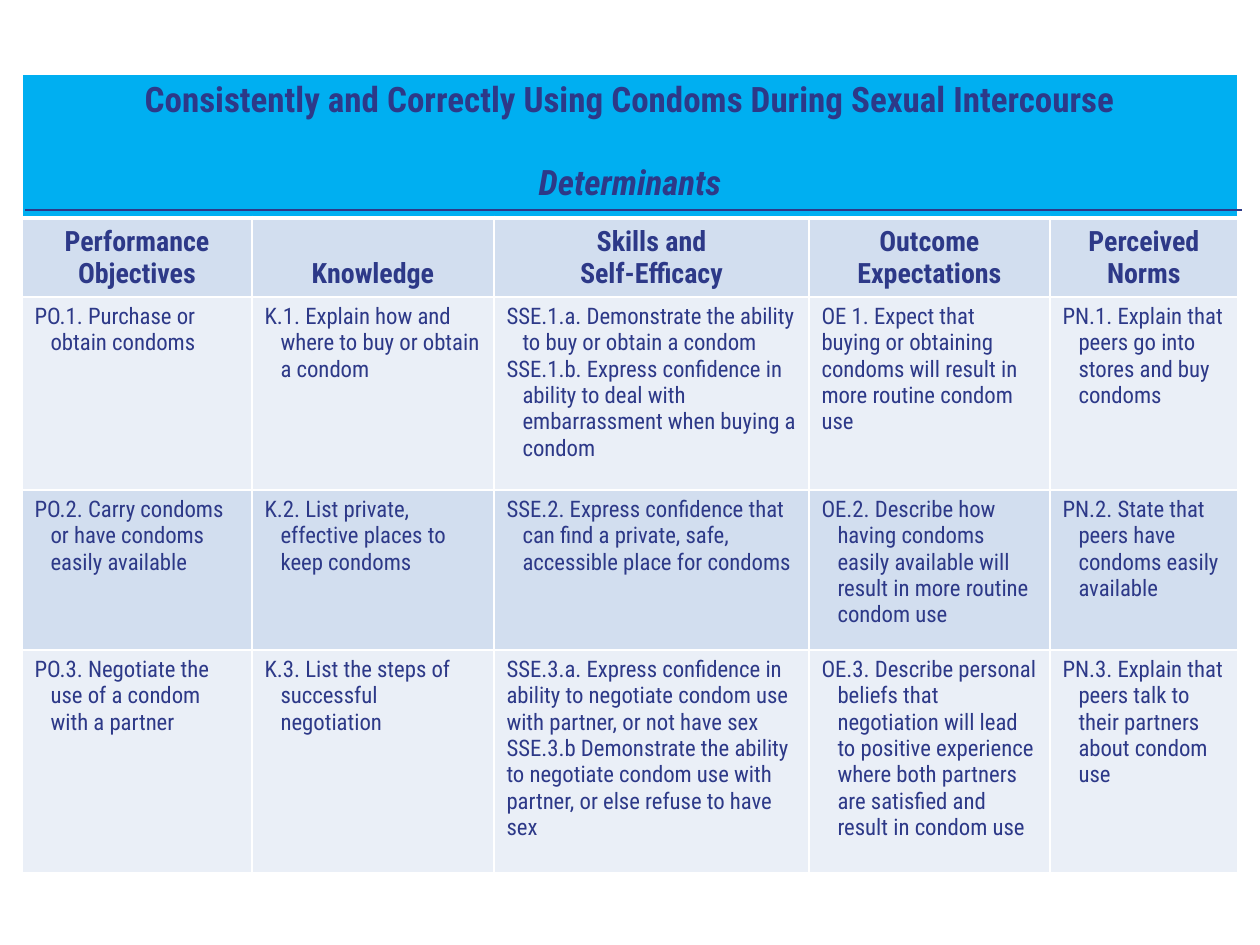
from lxml import etree
from pptx import Presentation
from pptx.dml.color import RGBColor
from pptx.enum.shapes import MSO_CONNECTOR
from pptx.enum.text import MSO_ANCHOR, PP_ALIGN
from pptx.oxml.ns import qn
from pptx.util import Pt

CENTER, LEFT = PP_ALIGN.CENTER, PP_ALIGN.LEFT
TOP, BOTTOM = MSO_ANCHOR.TOP, MSO_ANCHOR.BOTTOM
STRAIGHT = MSO_CONNECTOR.STRAIGHT

# Content
BANNER = ["Consistently and Correctly Using Condoms During Sexual Intercourse", "Determinants"]
HEADINGS = [
    "Performance Objectives", "Knowledge", "Skills and\vSelf-Efficacy",
    "Outcome Expectations", "Perceived Norms",
]
OBJECTIVES = [
    [
        ["PO.1. Purchase or obtain condoms"],
        ["K.1. Explain how and where to buy or obtain a condom"],
        ["SSE.1.a. Demonstrate the ability to buy or obtain a condom",
         "SSE.1.b. Express confidence in ability to deal with embarrassment when buying a condom"],
        ["OE 1. Expect that buying or obtaining condoms will result in more routine condom use"],
        ["PN.1. Explain that peers go into stores and buy condoms"],
    ],
    [
        ["PO.2. Carry condoms or have condoms easily available"],
        ["K.2. List private, effective places to keep condoms"],
        ["SSE.2. Express confidence that can find a private, safe, accessible place for condoms"],
        ["OE.2. Describe how having condoms easily available will result in more routine condom use"],
        ["PN.2. State that peers have condoms easily available"],
    ],
    [
        ["PO.3. Negotiate the use of a condom with a partner"],
        ["K.3. List the steps of successful negotiation"],
        ["SSE.3.a. Express confidence in ability to negotiate condom use with partner, or not have sex",
         "SSE.3.b Demonstrate the ability to negotiate condom use with partner, or else refuse to have sex"],
        ["OE.3. Describe personal beliefs that negotiation will lead to positive experience "
         "where both partners are satisfied and result in condom use"],
        ["PN.3. Explain that peers talk to their partners about condom use"],
    ],
]
FLUSH_CELLS = {(0, 3), (2, 2)}  # objective row, column without hanging indent

# Layout and style
SLIDE_W, SLIDE_H = 1260, 945
TABLE_X, TABLE_Y = 22, 74
COLUMN_WIDTHS = [230, 242, 315, 241, 188]
ROW_HEIGHTS = [144, 79, 193, 160, 223]
RULE_X1, RULE_X2, RULE_Y = 25, 1242, 210
HANGING = 16
FONT = "Roboto Condensed"
COLORS = {"text": "2D3988", "banner": "00AFF1", "dark": "D2DEEF",
          "light": "EAEFF7", "border": "FFFFFF"}


def px(value):
    return round(value * 9144000 / SLIDE_W)


def color(name):
    return RGBColor.from_string(COLORS[name])


def add_borders(cell, bottom):
    properties = cell._tc.get_or_add_tcPr()
    for side, width in (("L", 1), ("R", 1), ("T", 1), ("B", bottom)):
        line = etree.SubElement(properties, qn("a:ln" + side), w=str(Pt(width)))
        fill = etree.SubElement(line, qn("a:solidFill"))
        etree.SubElement(fill, qn("a:srgbClr"), val=COLORS["border"])


def fill_cell(cell, texts, fill, size, bold=False, align=LEFT, anchor=TOP,
              hanging=0, bottom=1):
    add_borders(cell, bottom)
    cell.fill.solid()
    cell.fill.fore_color.rgb = color(fill)
    cell.vertical_anchor = anchor
    cell.text_frame.text = "\n".join(texts)
    for paragraph in cell.text_frame.paragraphs:
        paragraph.alignment = align
        if hanging:
            indents = paragraph._p.get_or_add_pPr()
            indents.set("marL", str(px(hanging)))
            indents.set("indent", str(-px(hanging)))
        for run in paragraph.runs:
            run.font.name = FONT
            run.font.size = Pt(size)
            run.font.bold = bold
            run.font.color.rgb = color("text")


prs = Presentation()
prs.slide_width, prs.slide_height = px(SLIDE_W), px(SLIDE_H)
slide = prs.slides.add_slide(prs.slide_layouts[6])

# Table grid
table = slide.shapes.add_table(
    len(ROW_HEIGHTS), len(COLUMN_WIDTHS), px(TABLE_X), px(TABLE_Y),
    px(sum(COLUMN_WIDTHS)), px(sum(ROW_HEIGHTS))).table
for column, width in zip(table.columns, COLUMN_WIDTHS):
    column.width = px(width)
for row, height in zip(table.rows, ROW_HEIGHTS):
    row.height = px(height)

# Banner across all columns
banner = table.cell(0, 0)
banner.merge(table.cell(0, len(COLUMN_WIDTHS) - 1))
fill_cell(banner, BANNER, "banner", 20, bold=True, align=CENTER, bottom=3)
determinants = banner.text_frame.paragraphs[1]
determinants.space_before = Pt(23.5)
determinants.runs[0].font.italic = True

# Column headings
for c, heading in enumerate(HEADINGS):
    fill_cell(table.cell(1, c), [heading], "dark", 16, bold=True,
              align=CENTER, anchor=BOTTOM)

# Objectives in banded rows
for r, objective in enumerate(OBJECTIVES):
    for c, texts in enumerate(objective):
        fill_cell(table.cell(r + 2, c), texts, "dark" if r % 2 else "light", 13,
                  hanging=0 if (r, c) in FLUSH_CELLS else HANGING)

# Rule under the banner text
rule = slide.shapes.add_connector(STRAIGHT, px(RULE_X1), px(RULE_Y), px(RULE_X2), px(RULE_Y))
rule.line.color.rgb = color("text")
rule.line.width = Pt(1)
etree.SubElement(rule._element.spPr, qn("a:effectLst"))

prs.save("out.pptx")
